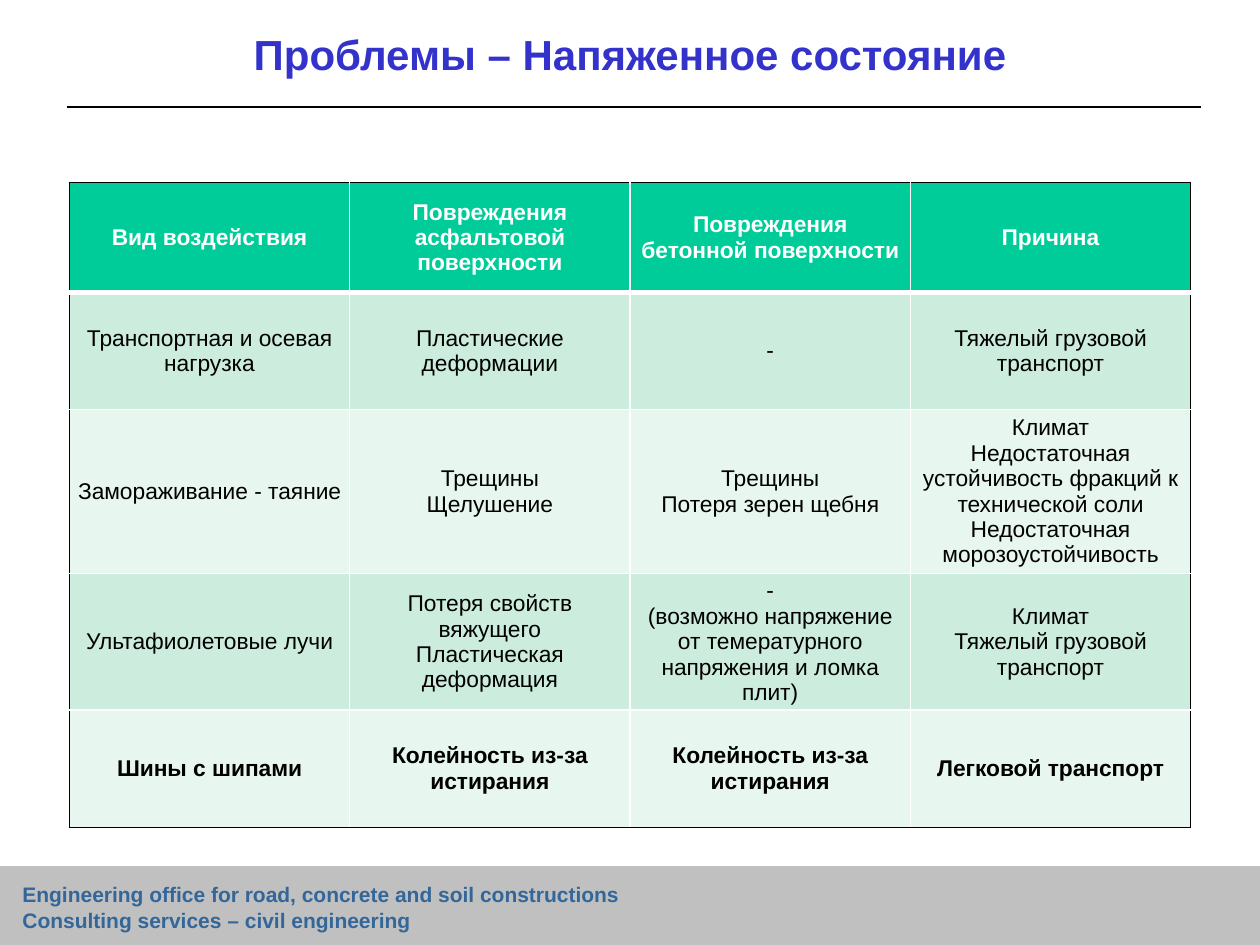
"""Build a slide with a table of pavement stresses, damage and causes."""
from dataclasses import dataclass

from lxml import etree
from pptx import Presentation, util as u
from pptx.dml.color import RGBColor
from pptx.enum import shapes, text
from pptx.oxml import ns


@dataclass(frozen=True)
class Theme:
    """Colours and type sizes of the slide."""
    font: str = "Arial"
    title: str = "3333CC"
    ink: str = "000000"
    paper: str = "FFFFFF"
    band: str = "C0C0C0"
    footer: str = "336699"
    header: str = "00CC99"
    stripes: tuple = ("E7F6EF", "CCECDE")
    title_size: int = 24
    footer_size: int = 12
    cell_size: int = 13


THEME = Theme()
WIDTH, HEIGHT = 10, 7.5
COLUMN_WIDTH = 8.9 / 4
ROW_HEIGHTS = (0.87, 0.93, 0.93, 0.93, 0.93)
ROWS = (
    ("Вид воздействия", "Повреждения асфальтовой поверхности",
     "Повреждения бетонной поверхности", "Причина"),
    ("Транспортная и осевая нагрузка", "Пластические деформации", "-",
     "Тяжелый грузовой транспорт"),
    ("Замораживание - таяние", "Трещины\nЩелушение",
     "Трещины\nПотеря зерен щебня",
     "Климат\vНедостаточная устойчивость фракций к технической соли\n"
     "Недостаточная морозоустойчивость"),
    ("Ультафиолетовые лучи", "Потеря свойств вяжущего\nПластическая деформация",
     "-\n(возможно напряжение от темературного напряжения и ломка плит)",
     "Климат\nТяжелый грузовой транспорт"),
    ("Шины с шипами", "Колейность из-за истирания",
     "Колейность из-за истирания", "Легковой транспорт"),
)


def apply(target, values):
    """Set each attribute named in values."""
    for name, value in values.items():
        setattr(target, name, value)


def inches(*lengths):
    """Convert lengths to slide units."""
    return [u.Inches(length) for length in lengths]


def write(frame, words, size, colour, bold=True, align=text.PP_ALIGN.CENTER):
    """Fill a text frame with evenly formatted paragraphs."""
    frame.text = words
    for para in frame.paragraphs:
        para.alignment = align
        for span in para.runs:
            apply(span.font, {"name": THEME.font, "size": u.Pt(size), "bold": bold})
            span.font.color.rgb = RGBColor.from_string(colour)


def add_title(page, box):
    """Place the heading in the title placeholder."""
    title = page.shapes.title
    apply(title, dict(zip(("left", "top", "width", "height"), inches(*box))))
    apply(title.text_frame, {"vertical_anchor": text.MSO_ANCHOR.MIDDLE, "word_wrap": True})
    write(title.text_frame, "Проблемы – Напяженное состояние",
          THEME.title_size, THEME.title)


def add_rule(page, left, top, width):
    """Draw the line under the heading."""
    rule = page.shapes.add_connector(
        shapes.MSO_CONNECTOR.STRAIGHT, *inches(left, top, left + width, top))
    rule.line.width = u.Pt(1.5)
    rule.line.color.rgb = RGBColor.from_string(THEME.ink)
    etree.SubElement(rule._element.spPr, ns.qn("a:effectLst"))


def add_footer(page, box):
    """Draw the grey band with the office name."""
    left, top, width, height = box
    band = page.shapes.add_shape(shapes.MSO_SHAPE.RECTANGLE, *inches(*box))
    band.shadow.inherit = False
    band.fill.solid()
    band.line.width = u.Pt(0.75)
    for paint in (band.fill.fore_color, band.line.color):
        paint.rgb = RGBColor.from_string(THEME.band)
    label = page.shapes.add_textbox(
        *inches(left + 0.08, top + 0.07, width * 0.63, height * 0.81))
    label.text_frame.word_wrap = True
    write(label.text_frame,
          "Engineering office for road, concrete and soil constructions\n"
          "Consulting services – civil engineering",
          THEME.footer_size, THEME.footer, align=text.PP_ALIGN.LEFT)


def add_border(cell, side, colour, points):
    """Add one cell border."""
    line = etree.SubElement(cell._tc.get_or_add_tcPr(), ns.qn(f"a:ln{side}"),
                            w=str(u.Pt(points)))
    fill = etree.SubElement(line, ns.qn("a:solidFill"))
    etree.SubElement(fill, ns.qn("a:srgbClr"), val=colour)


def style_cell(cell, row, column):
    """Set the borders, fill and margins of a cell from its position."""
    last_row, last_column = len(ROWS) - 1, len(ROWS[0]) - 1
    outer = {"L": column == 0, "R": column == last_column,
             "T": row == 0, "B": row == last_row}
    for side, edge in outer.items():
        heavy = (side, row) in (("B", 0), ("T", 1))
        add_border(cell, side, THEME.ink if edge else THEME.paper, 3 if heavy else 1)
    cell.fill.solid()
    cell.fill.fore_color.rgb = RGBColor.from_string(
        THEME.stripes[row % 2] if row else THEME.header)
    apply(cell, {"margin_left": u.Inches(0.07), "margin_right": u.Inches(0.07),
                 "margin_top": 0, "margin_bottom": 0,
                 "vertical_anchor": text.MSO_ANCHOR.MIDDLE})


def add_damage_table(page, left, top):
    """Place the table of stresses, damage and causes."""
    table = page.shapes.add_table(
        len(ROWS), len(ROWS[0]),
        *inches(left, top, COLUMN_WIDTH * len(ROWS[0]), sum(ROW_HEIGHTS))).table
    table.horz_banding = False
    for column in table.columns:
        column.width = u.Inches(COLUMN_WIDTH)
    for row, words in enumerate(ROWS):
        table.rows[row].height = u.Inches(ROW_HEIGHTS[row])
        for column, entry in enumerate(words):
            cell = table.cell(row, column)
            style_cell(cell, row, column)
            write(cell.text_frame, entry, THEME.cell_size,
                  THEME.ink if row else THEME.paper, bold=row in (0, len(ROWS) - 1))


def main():
    """Build and save the deck."""
    deck = Presentation()
    deck.slide_width, deck.slide_height = inches(WIDTH, HEIGHT)
    page = deck.slides.add_slide(deck.slide_layouts[5])
    add_rule(page, 0.53, 0.85, 9)
    add_footer(page, (0, 6.88, WIDTH, 0.63))
    add_title(page, (0, 0, WIDTH, 0.85))
    add_damage_table(page, 0.55, 1.45)
    deck.save("out.pptx")


if __name__ == "__main__":
    main()
